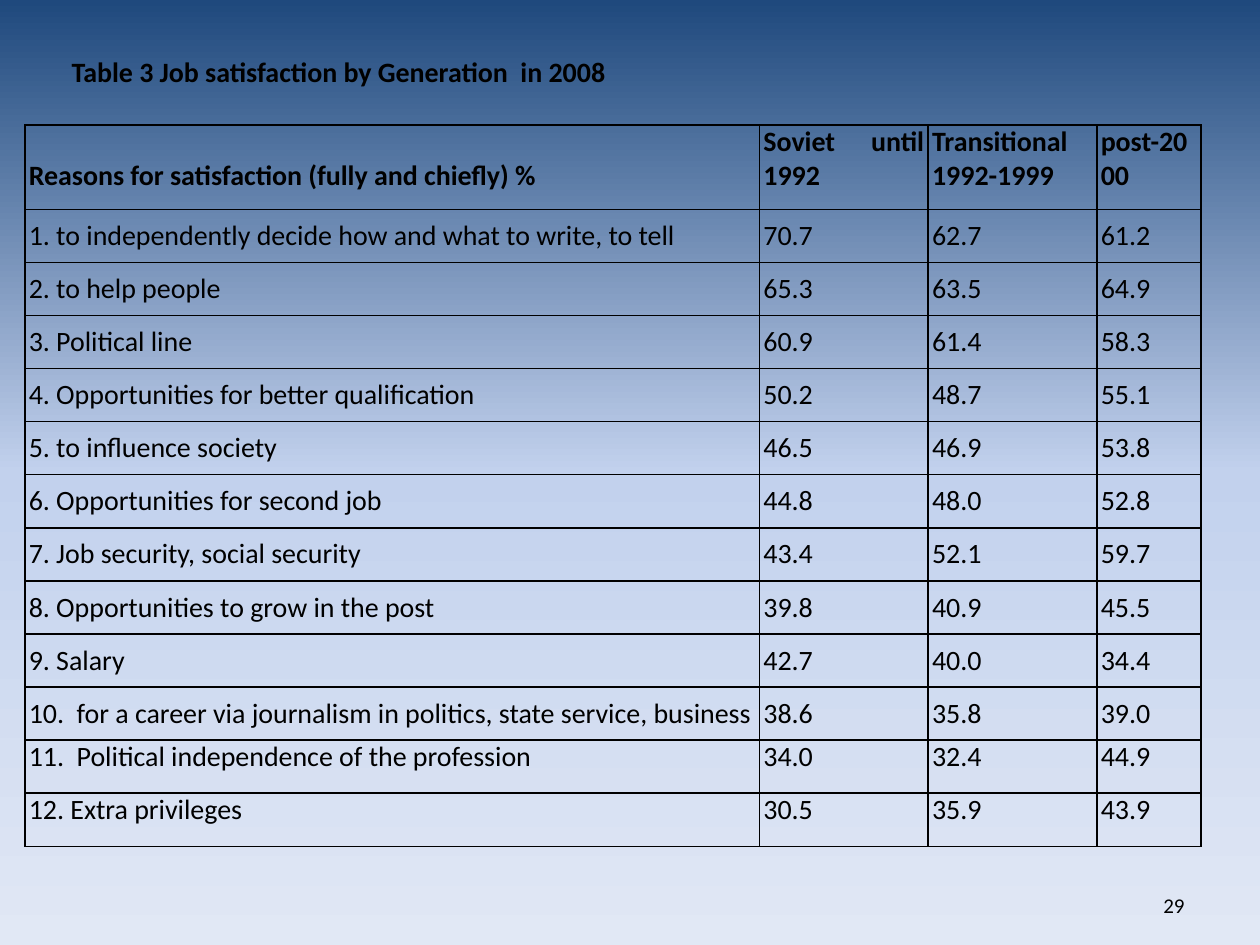
"""Build the slide with the table of job satisfaction by generation."""
import copy

import lxml.etree
import pptx
import pptx.dml.color
import pptx.enum.text
import pptx.oxml.ns
import pptx.util

Cm = pptx.util.Cm
ALIGN = pptx.enum.text.PP_ALIGN
ANCHOR = pptx.enum.text.MSO_ANCHOR
qn = pptx.oxml.ns.qn


def color(value):
    return pptx.dml.color.RGBColor.from_string(value)


def write(frame, text, size=16, bold=False, align=ALIGN.JUSTIFY):
    para = frame.paragraphs[0]
    para.alignment = align
    span = para.add_run()
    span.text = text
    span.font.name = "Calibri"
    span.font.size = pptx.util.Pt(size)
    span.font.bold = bold
    span.font.color.rgb = color("000000")


rows = [
    ("Reasons for satisfaction (fully and chiefly) %", "Soviet until 1992 ", "Transitional  1992-1999", "post-2000"),
    ("1. to independently decide how and what to write, to tell", "70.7", "62.7", "61.2"),
    ("2. to help people", "65.3", "63.5", "64.9"),
    ("3. Political line", "60.9", "61.4", "58.3"),
    ("4. Opportunities for better qualification ", "50.2", "48.7", "55.1"),
    ("5. to influence society", "46.5", "46.9", "53.8"),
    ("6. Opportunities for second job", "44.8", "48.0", "52.8"),
    ("7. Job security, social security ", "43.4", "52.1", "59.7"),
    ("8. Opportunities to grow in the post", "39.8", "40.9", "45.5"),
    ("9. Salary ", "42.7", "40.0", "34.4 "),
    ("10.  for a career via journalism in politics, state service, business", "38.6", "35.8", "39.0"),
    ("11.  Political independence of the profession", "34.0", "32.4", "44.9"),
    ("12. Extra privileges  ", "30.5", "35.9", "43.9"),
]
column_widths = [14.81, 3.4, 3.4, 2.1]
header_height, row_height = 1.7, 1.07

deck = pptx.Presentation()
deck.slide_width, deck.slide_height = Cm(25.4), Cm(19.05)
slide = deck.slides.add_slide(deck.slide_layouts[5])

backdrop = slide.background.fill
backdrop.gradient()
backdrop.gradient_angle = 270
stop_list = slide.element.find(".//" + qn("a:gsLst"))
stop_list.append(copy.deepcopy(stop_list[-1]))
for stop, (position, shade) in zip(backdrop.gradient_stops, [(0, "1F497D"), (0.5, "C2D1ED"), (1, "E1E8F5")]):
    stop.position = position
    stop.color.rgb = color(shade)

title = slide.shapes.title
title.left, title.top, title.width, title.height = Cm(1.19), Cm(0.97), Cm(11.4), Cm(0.94)
title.text_frame.word_wrap = False
title.text_frame.auto_size = pptx.enum.text.MSO_AUTO_SIZE.SHAPE_TO_FIT_TEXT
title.text_frame.vertical_anchor = ANCHOR.MIDDLE
write(title.text_frame, "Table 3 Job satisfaction by Generation  in 2008", bold=True)

table_height = header_height + row_height * (len(rows) - 1)
table = slide.shapes.add_table(
    len(rows), len(column_widths), Cm(0.5), Cm(2.52), Cm(sum(column_widths)), Cm(table_height)
).table
table.first_row = table.horz_banding = False
for column, width in zip(table.columns, column_widths):
    column.width = Cm(width)

for row_index, row in enumerate(rows):
    header = row_index == 0
    table.rows[row_index].height = Cm(header_height if header else row_height)
    for column_index, text in enumerate(row):
        cell = table.cell(row_index, column_index)
        cell.margin_left = cell.margin_right = Cm(0.08)
        cell.margin_top = Cm(0.69 if header and column_index == 0 else 0)
        cell.margin_bottom = 0
        cell.vertical_anchor = ANCHOR.MIDDLE if 1 <= row_index <= 10 else ANCHOR.TOP
        write(cell.text_frame, text, bold=header)
        properties = cell._tc.get_or_add_tcPr()
        for side in ("a:lnL", "a:lnR", "a:lnT", "a:lnB"):
            border = lxml.etree.SubElement(properties, qn(side), w=str(pptx.util.Pt(1)))
            border_fill = lxml.etree.SubElement(border, qn("a:solidFill"))
            lxml.etree.SubElement(border_fill, qn("a:srgbClr"), val="000000")
        cell.fill.background()

number_box = slide.shapes.add_textbox(Cm(18.21), Cm(17.35), Cm(5.92), Cm(1.27))
number_box.text_frame.word_wrap = True
number_box.text_frame.vertical_anchor = ANCHOR.BOTTOM
write(number_box.text_frame, "29", size=12, align=ALIGN.RIGHT)

deck.save("out.pptx")
